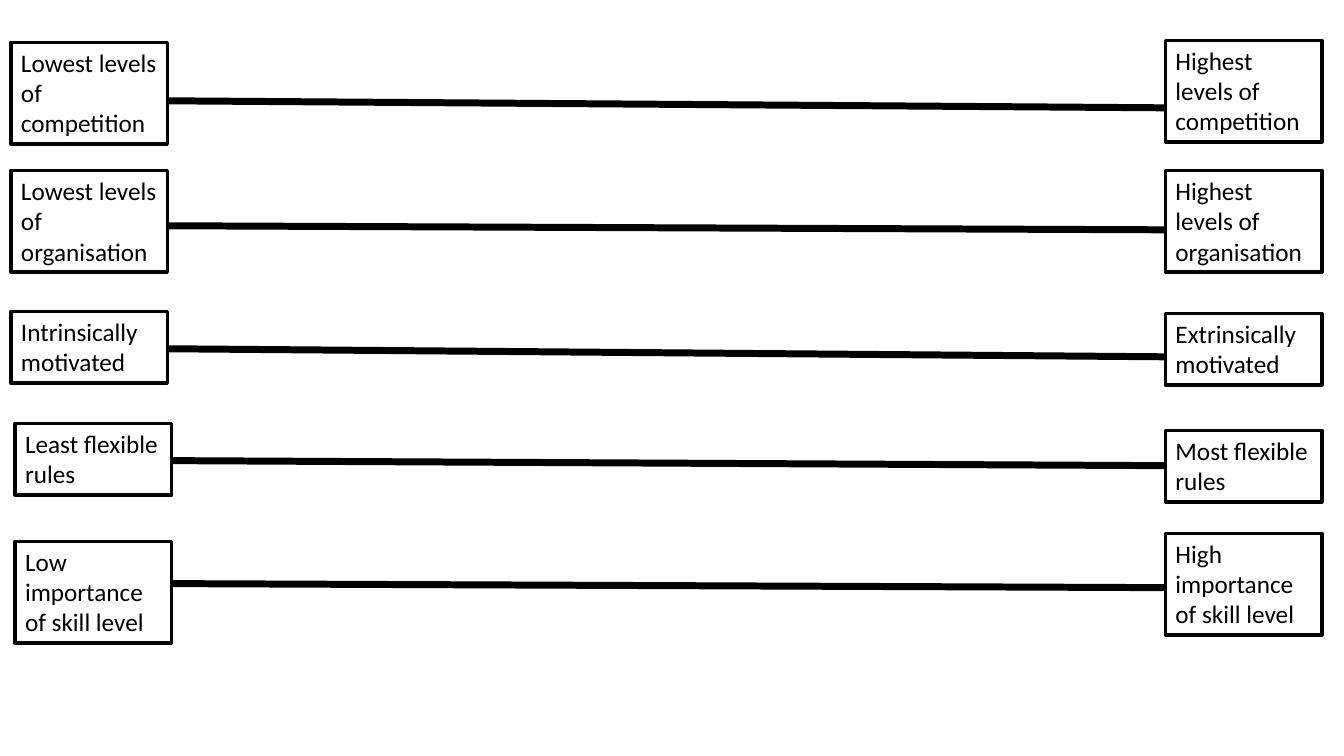
from lxml import etree
from pptx import Presentation
from pptx.dml.color import RGBColor
from pptx.enum.shapes import MSO_CONNECTOR
from pptx.enum.text import MSO_ANCHOR, MSO_AUTO_SIZE
from pptx.oxml.ns import qn
from pptx.util import Inches, Pt

STRAIGHT = MSO_CONNECTOR.STRAIGHT
TOP = MSO_ANCHOR.TOP
FIT_SHAPE = MSO_AUTO_SIZE.SHAPE_TO_FIT_TEXT

COLORS = {"ink": "000000"}
INK = RGBColor.from_string(COLORS["ink"])
BOX_W = 1.55
RIGHT_X = 11.56

# low label, left, top; high label, top; box height; line start y, end y
SCALES = [
    ("Lowest levels of competition", 0.11, 0.42,
     "Highest levels of competition", 0.4, 1.01, 1, 1.07),
    ("Lowest levels of organisation", 0.11, 1.69,
     "Highest levels of organisation", 1.69, 1.01, 2.24, 2.28),
    ("Intrinsically motivated", 0.11, 3.09,
     "Extrinsically motivated", 3.11, 0.71, 3.46, 3.54),
    ("Least flexible rules", 0.15, 4.2,
     "Most flexible rules", 4.27, 0.71, 4.57, 4.62),
    ("Low importance of skill level", 0.15, 5.37,
     "High importance of skill level", 5.29, 1.01, 5.79, 5.83),
]

prs = Presentation()
prs.slide_width = Inches(13.33)
prs.slide_height = Inches(7.5)
s = prs.slides.add_slide(prs.slide_layouts[6])


def add_label(text, x, y, h):
    box = s.shapes.add_textbox(Inches(x), Inches(y), Inches(BOX_W), Inches(h))
    box.line.color.rgb = INK
    box.line.width = Pt(2.5)
    tf = box.text_frame
    tf.word_wrap = True
    tf.auto_size = FIT_SHAPE
    tf.vertical_anchor = TOP
    p = tf.paragraphs[0]
    p.text = text
    p.font.name = "Calibri"
    p.font.size = Pt(18)
    p.font.color.rgb = INK


for low, low_x, low_y, high, high_y, height, start_y, end_y in SCALES:
    line = s.shapes.add_connector(STRAIGHT, Inches(low_x + BOX_W), Inches(start_y),
                                  Inches(RIGHT_X), Inches(end_y))
    line.line.color.rgb = INK
    line.line.width = Pt(5)
    etree.SubElement(line._element.spPr, qn("a:effectLst"))
    add_label(low, low_x, low_y, height)
    add_label(high, RIGHT_X, high_y, height)

prs.save("out.pptx")
